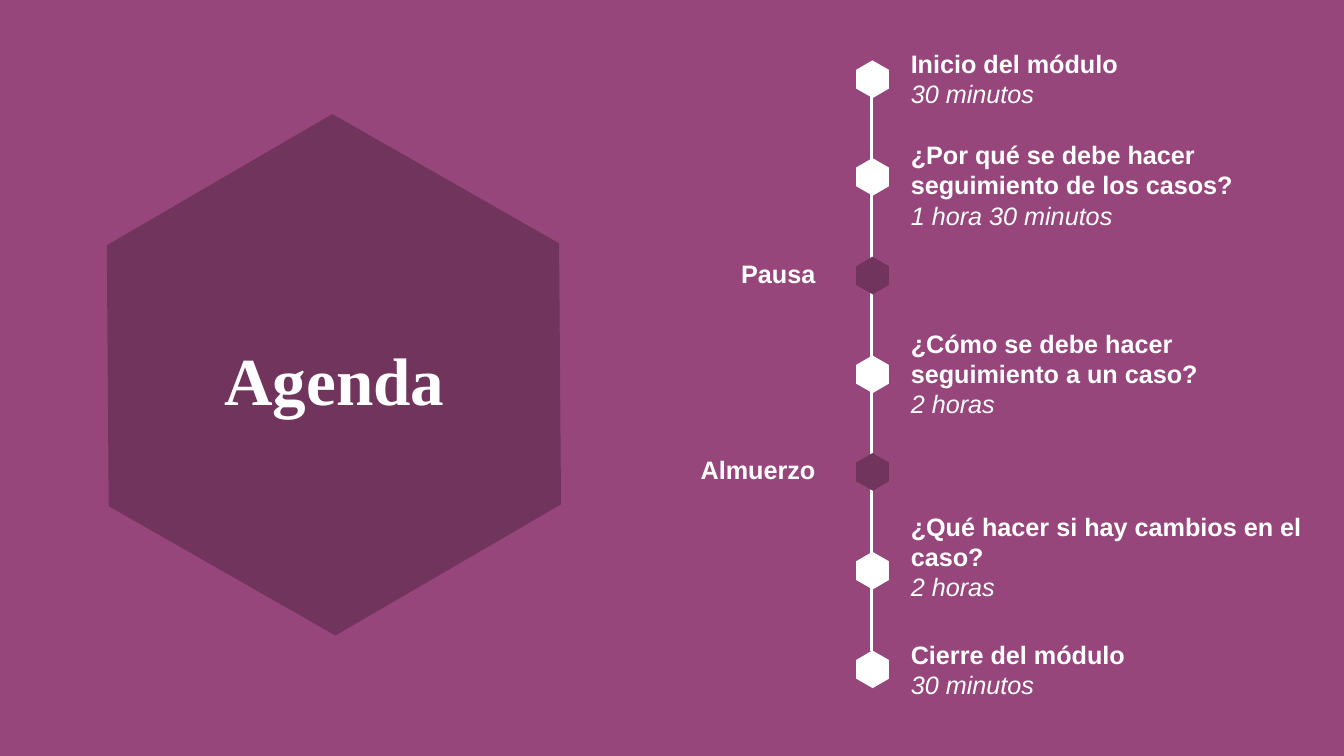
from lxml import etree
from pptx import Presentation
from pptx.dml.color import RGBColor
from pptx.enum.shapes import MSO_CONNECTOR as Connector, MSO_SHAPE as Shape
from pptx.enum.text import MSO_ANCHOR as Anchor, MSO_AUTO_SIZE as AutoSize, PP_ALIGN as Align
from pptx.oxml.ns import qn
from pptx.util import Pt

PX = 9525  # EMU in one px, 96 px to the inch
COLORS = {"background": "97467C", "plum": "71345D", "white": "FFFFFF"}

# Timeline geometry
AXIS_X = 831
FIRST_Y, LAST_Y = 75, 637
MARKER_W, MARKER_H = 36, 31

# Marker colour, text top, text width, heading, duration (breaks have none)
STOPS = [
    ("white", 41, 345, "Inicio del módulo", "30 minutos"),
    ("white", 128, 345, "¿Por qué se debe hacer seguimiento de los casos?", "1 hora 30 minutos"),
    ("plum", 241, 142, "Pausa", None),
    ("white", 308, 345, "¿Cómo se debe hacer seguimiento a un caso?", "2 horas"),
    ("plum", 428, 142, "Almuerzo", None),
    ("white", 482, 393, "¿Qué hacer si hay cambios en el caso?", "2 horas"),
    ("white", 604, 339, "Cierre del módulo", "30 minutos"),
]


def px(*lengths):
    return [length * PX for length in lengths]


def rgb(name):
    return RGBColor.from_string(COLORS[name])


def write(para, text, size=18, font="Arial", color="white", bold=False, italic=False,
          align=Align.LEFT):
    para.alignment = align
    span = para.add_run()
    span.text = text
    span.font.size = Pt(size)
    span.font.name = font
    span.font.bold = bold
    span.font.italic = italic
    span.font.color.rgb = rgb(color)


def add_hexagon(page, left, top, width, height, color):
    hexagon = page.shapes.add_shape(Shape.HEXAGON, *px(left, top, width, height))
    hexagon.adjustments[0] = 0.29
    hexagon.rotation = 29.7
    hexagon.shadow.inherit = False
    hexagon.fill.solid()
    hexagon.fill.fore_color.rgb = rgb(color)
    hexagon.line.fill.background()
    return hexagon


def add_axis(page, x, top, bottom):
    axis = page.shapes.add_connector(Connector.STRAIGHT, *px(x, top, x, bottom))
    axis.line.color.rgb = rgb("white")
    axis.line.width = Pt(2.25)
    etree.SubElement(axis.element.spPr, qn("a:effectLst"))


def add_label(page, left, top, width, height, heading, duration, align):
    box = page.shapes.add_textbox(*px(left, top, width, height))
    frame = box.text_frame
    frame.word_wrap = True
    frame.auto_size = AutoSize.SHAPE_TO_FIT_TEXT
    write(frame.paragraphs[0], heading, bold=True, align=align)
    if duration:
        write(frame.add_paragraph(), duration, italic=True, align=align)


def add_stop(page, center_y, color, top, width, heading, duration):
    add_hexagon(page, AXIS_X - MARKER_W // 2, center_y - MARKER_H // 2,
                MARKER_W, MARKER_H, color)
    if duration:
        height = 97 if len(heading) > 30 else 68
        add_label(page, 858, top, width, height, heading, duration, Align.LEFT)
    else:
        add_label(page, 644, top, width, 38, heading, duration, Align.RIGHT)


def set_title(page, text):
    title = page.shapes.title
    title.left, title.top, title.width, title.height = px(108, 336, 421, 59)
    frame = title.text_frame
    frame.word_wrap = True
    frame.auto_size = AutoSize.NONE
    frame.vertical_anchor = Anchor.MIDDLE
    para = frame.paragraphs[0]
    para.line_spacing = 0.9
    write(para, text, size=48, font="Times New Roman", bold=True, align=Align.CENTER)
    return title


def main():
    deck = Presentation()
    deck.slide_width, deck.slide_height = px(1280, 720)
    page = deck.slides.add_slide(deck.slide_layouts[5])
    page.background.fill.solid()
    page.background.fill.fore_color.rgb = rgb("background")

    # Title in front of the large hexagon
    title = set_title(page, "Agenda")
    panel = add_hexagon(page, 69, 142, 498, 430, "plum")
    title.element.addprevious(panel.element)

    # Timeline with evenly spaced stops
    add_axis(page, 830, 69, 620)
    for index, stop in enumerate(STOPS):
        center_y = FIRST_Y + (LAST_Y - FIRST_Y) * index // (len(STOPS) - 1)
        add_stop(page, center_y, *stop)

    deck.save("out.pptx")


if __name__ == "__main__":
    main()
